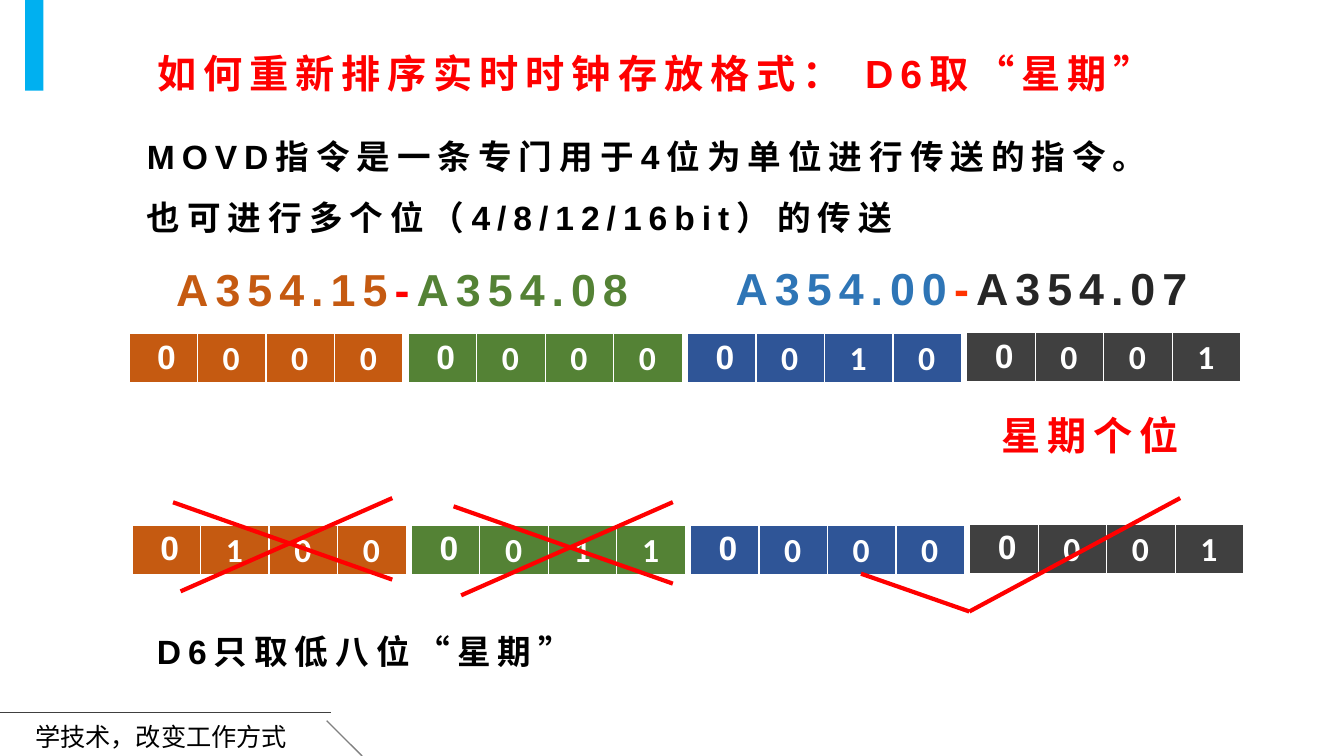
import pptx
import pptx.util
import pptx.dml.color
import pptx.enum.shapes
import pptx.enum.text
import pptx.oxml
import pptx.oxml.ns

COLUMNS, ROWS = 160, 90
COLORS = {
    "black": "000000", "white": "FFFFFF", "red": "FF0000", "vermilion": "FF3300",
    "sky": "00B0F0", "rule": "404040", "slant": "808080",
    "orange": "C55A11", "green": "548235", "navy": "2F5597", "charcoal": "404040",
    "blue": "2E75B6", "ink": "262626",
}
NIBBLE_COLORS = ["orange", "green", "navy", "charcoal"]


def rgb(color):
    return pptx.dml.color.RGBColor.from_string(COLORS[color])


class ClockSlide:
    """Draws on one slide, with lengths in grid columns and rows."""

    latin, east_asian, digit = "Arial", "Noto Sans CJK SC", "Calibri"

    def __init__(self, deck):
        deck.slide_width = pptx.util.Inches(13.33)
        deck.slide_height = pptx.util.Inches(7.5)
        self.column = deck.slide_width / COLUMNS
        self.row = deck.slide_height / ROWS
        self.slide = deck.slides.add_slide(deck.slide_layouts[5])
        self.shapes = self.slide.shapes

    def place(self, *lengths):
        units = (self.column, self.row) * 2
        return [round(length * unit) for length, unit in zip(lengths, units)]

    def style(self, paragraph, size, color, font=None, bold=True, spacing=5):
        paragraph.alignment = pptx.enum.text.PP_ALIGN.LEFT
        paragraph.font.size = pptx.util.Pt(size)
        paragraph.font.bold = bold
        paragraph.font.color.rgb = rgb(color)
        paragraph.font.name = font or self.latin
        defaults = paragraph._p.get_or_add_pPr().get_or_add_defRPr()
        defaults.set("spc", str(spacing * 100))
        defaults.append(pptx.oxml.parse_xml(
            f'<a:ea {pptx.oxml.ns.nsdecls("a")} typeface="{self.east_asian}"/>'))

    def fill_frame(self, frame, lines, size, color, wrap=False, line_spacing=None, **style):
        frame.word_wrap = wrap
        frame.vertical_anchor = pptx.enum.text.MSO_ANCHOR.TOP
        frame.auto_size = pptx.enum.text.MSO_AUTO_SIZE.SHAPE_TO_FIT_TEXT
        for number, line in enumerate(lines):
            paragraph = frame.add_paragraph() if number else frame.paragraphs[0]
            self.style(paragraph, size, color, **style)
            paragraph.line_spacing = line_spacing
            for words, run_color in line:
                run = paragraph.add_run()
                run.text = words
                if run_color != color:
                    run.font.color.rgb = rgb(run_color)

    def title(self, words, box, size, color):
        heading = self.shapes.title
        heading.left, heading.top, heading.width, heading.height = self.place(*box)
        self.fill_frame(heading.text_frame, [[(words, color)]], size, color)

    def text(self, lines, box, size, color, **style):
        frame = self.shapes.add_textbox(*self.place(*box)).text_frame
        lines = [[(line, color)] if isinstance(line, str) else line for line in lines]
        self.fill_frame(frame, lines, size, color, **style)

    def bar(self, box, color):
        bar = self.shapes.add_shape(
            pptx.enum.shapes.MSO_SHAPE.RECTANGLE, *self.place(*box))
        bar.shadow.inherit = False
        bar.fill.solid()
        bar.fill.fore_color.rgb = rgb(color)
        bar.line.fill.background()

    def stroke(self, start, end, color="red", width=3):
        stroke = self.shapes.add_connector(
            pptx.enum.shapes.MSO_CONNECTOR.STRAIGHT, *self.place(*start, *end))
        stroke.line.color.rgb = rgb(color)
        stroke.line.width = pptx.util.Pt(width)
        stroke._element.spPr.append(pptx.oxml.parse_xml(
            f'<a:effectLst {pptx.oxml.ns.nsdecls("a")}/>'))

    def borders(self, cell):
        properties = cell._tc.get_or_add_tcPr()
        for order, (side, width) in enumerate([("L", 1), ("R", 1), ("T", 1), ("B", 3)]):
            properties.insert(order, pptx.oxml.parse_xml(
                f'<a:ln{side} {pptx.oxml.ns.nsdecls("a")} w="{pptx.util.Pt(width)}">'
                f'<a:solidFill><a:srgbClr val="{COLORS["white"]}"/></a:solidFill>'
                f'</a:ln{side}>'))

    def nibble(self, bits, left, top, color):
        box = self.place(left, top, 32.64, 6)
        table = self.shapes.add_table(1, len(bits), *box).table
        for position, bit in enumerate(bits):
            cell = table.cell(0, position)
            cell.fill.solid()
            cell.fill.fore_color.rgb = rgb(color)
            self.borders(cell)
            cell.margin_left = pptx.util.Inches(0.25 if position else 0.28)
            cell.margin_right = 0
            cell.text = bit
            self.style(cell.text_frame.paragraphs[0], 24, "white", spacing=0,
                       font=self.digit if position else self.latin)

    def word(self, nibbles, left, top):
        for index, (bits, color) in enumerate(zip(nibbles, NIBBLE_COLORS)):
            raised = 0.12 if color == "charcoal" else 0
            self.nibble(bits, left + 33.24 * index, top - raised, color)


def main():
    deck = pptx.Presentation()
    clock = ClockSlide(deck)

    # Frame: corner bar and footer
    clock.stroke((0, 84.84), (39.4, 84.84), "rule", 0.25)
    clock.text(["学技术，改变工作方式"], (3, 85.3, 146, 4.8), 18, "black", wrap=True,
               font=clock.east_asian, bold=False, spacing=0)
    clock.stroke((38.9, 85.8), (43.1, 90), "slant", 1)
    clock.bar((3, 0, 2.16, 10.8), "sky")

    # Title and explanation
    clock.title("如何重新排序实时时钟存放格式： D6取“星期”",
                (17.5, 5.3, 123.4, 6.8), 28, "red")
    clock.text(["MOVD指令是一条专门用于4位为单位进行传送的指令。",
                "也可进行多个位（4/8/12/16bit）的传送"],
               (16.3, 13.2, 127.1, 14.9), 24, "black", wrap=True, line_spacing=1.5)

    # Bit ranges above the first word
    clock.text([[("A354.15", "orange"), ("-", "red"), ("A354.08", "green")]],
               (19.8, 30.6, 57.5, 7.7), 32, "orange")
    clock.text([[("A354.00", "blue"), ("-", "vermilion"), ("A354.07", "ink")]],
               (86.4, 30.4, 57.5, 7.7), 32, "blue")

    # The two 16-bit words
    clock.word(["0000", "0000", "0010", "0001"], 15.36, 39.72)
    clock.text(["星期个位"], (118, 48.4, 24.6, 6.8), 28, "red")
    clock.word(["0100", "0011", "0000", "0001"], 15.72, 62.52)

    # Crosses over the dropped high byte
    for right, down in [(0, 0), (33.4, 0.48)]:
        for (x1, y1), (x2, y2) in [((20.6, 59.8), (46.7, 69)), ((46.7, 59.3), (21.5, 70.4))]:
            clock.stroke((x1 + right, y1 + down), (x2 + right, y2 + down))

    # Tick on the kept low byte
    clock.stroke((102.5, 68.3), (115.4, 72.8))
    clock.stroke((115.4, 72.8), (140.5, 59.3))
    clock.text(["D6只取低八位“星期”"], (17.5, 74.5, 62.9, 6), 24, "black", wrap=True)

    deck.save("out.pptx")


if __name__ == "__main__":
    main()
